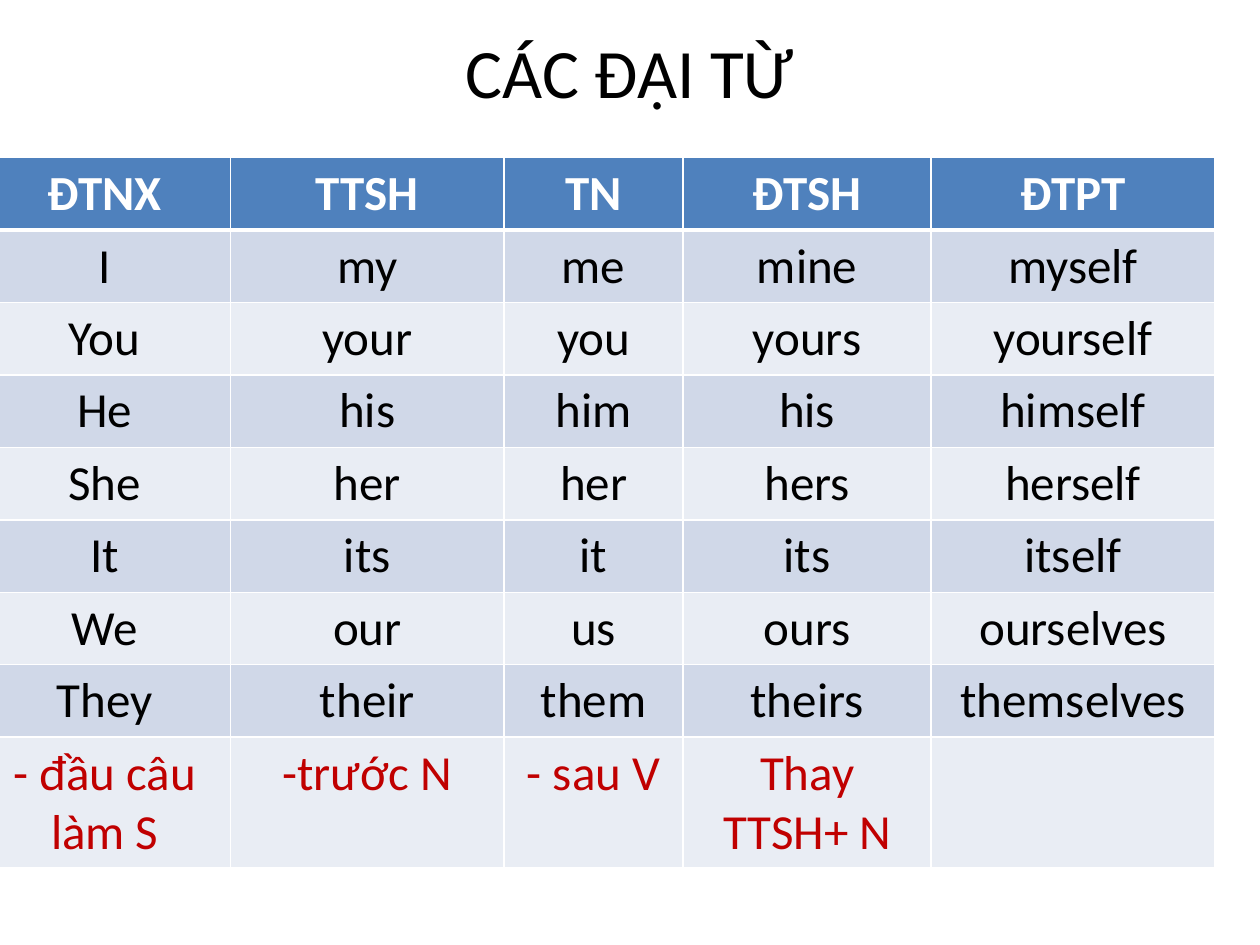
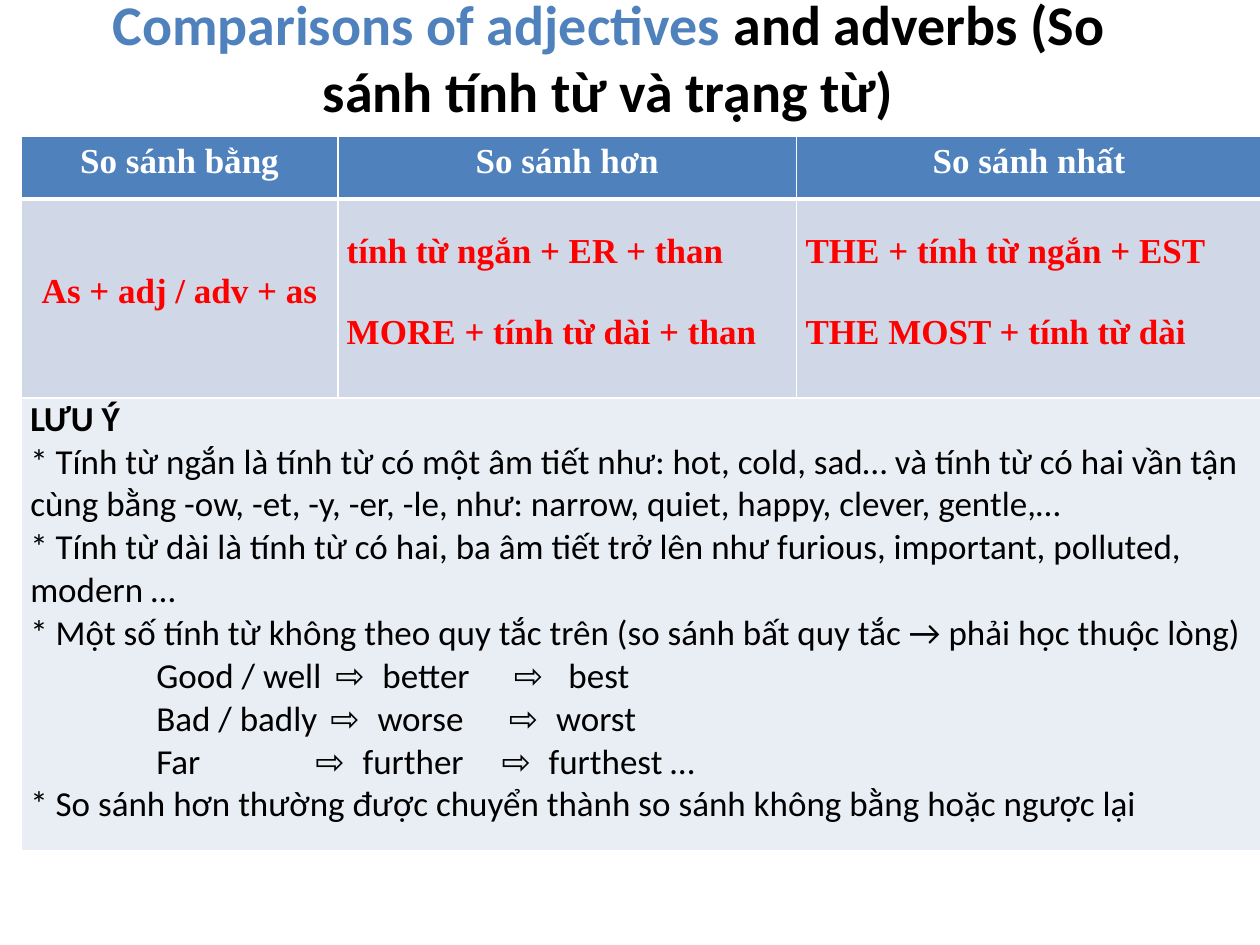
from lxml import etree
from pptx import Presentation
from pptx.dml.color import RGBColor
from pptx.enum.text import MSO_ANCHOR, PP_ALIGN
from pptx.oxml.ns import qn
from pptx.util import Cm, Pt

CENTER, LEFT = PP_ALIGN.CENTER, PP_ALIGN.LEFT
TOP, MIDDLE = MSO_ANCHOR.TOP, MSO_ANCHOR.MIDDLE
BLUE = RGBColor(0x4F, 0x81, 0xBD)
BAND_DARK = RGBColor(0xD0, 0xD8, 0xE8)
BAND_LIGHT = RGBColor(0xE9, 0xED, 0xF4)
WHITE = RGBColor(0xFF, 0xFF, 0xFF)
BLACK = RGBColor(0, 0, 0)
DARK_RED = RGBColor(0xC0, 0, 0)
RED = RGBColor(0xFF, 0, 0)
SANS, SERIF = "Calibri", "Times New Roman"

PRONOUNS = [
    ["ĐTNX", "TTSH", "TN", "ĐTSH", "ĐTPT"],
    ["I", "my", "me", "mine", "myself"],
    ["You", "your", "you", "yours", "yourself"],
    ["He", "his", "him", "his", "himself"],
    ["She", "her", "her", "hers", "herself"],
    ["It", "its", "it", "its", "itself"],
    ["We", "our", "us", "ours", "ourselves"],
    ["They", "their", "them", "theirs", "themselves"],
    ["- đầu câu làm S", "-trước N", "- sau V", "Thay TTSH+ N", ""],
]
COMPARISON_HEADS = ["So sánh bằng", "So sánh hơn", "So sánh nhất"]
COMPARISON_FORMS = [
    ["As + adj / adv + as"],
    ["tính từ ngắn + ER + than", "MORE + tính từ dài + than"],
    ["THE + tính từ ngắn + EST", "THE MOST + tính từ dài"],
]
NOTES = [
    ("LƯU Ý", []),
    ("* Tính từ ngắn là tính từ có một âm tiết như: hot, cold, sad… và tính từ có hai vần "
     "tận cùng bằng -ow, -et, -y, -er, -le, như: narrow, quiet, happy, clever, gentle,…", []),
    ("* Tính từ dài là tính từ có hai, ba âm tiết trở lên như furious, important, polluted, "
     "modern …", []),
    ("* Một số tính từ không theo quy tắc trên (so sánh bất quy tắc → phải học thuộc lòng)", []),
    ("\tGood / well\t⇨\tbetter\t⇨\tbest", [2.54, 6.15, 7.1, 9.75, 10.85]),
    ("\tBad / badly\t⇨\tworse\t⇨\tworst", [2.54, 6.05, 7, 9.65, 10.6]),
    ("\tFar\t⇨\tfurther\t⇨\tfurthest …", [2.54, 5.75, 6.7, 9.5, 10.45]),
    ("* So sánh hơn thường được chuyển thành so sánh không bằng hoặc ngược lại", []),
]


def add_run(p, text, size, color, bold=False, font=SANS):
    r = p.add_run()
    r.text = text
    r.font.name, r.font.size, r.font.bold = font, Pt(size), bold
    r.font.color.rgb = color


def add_title(s, left, top, width, height, size, runs, bold=False):
    tf = s.shapes.add_textbox(Cm(left), Cm(top), Cm(width), Cm(height)).text_frame
    tf.word_wrap = True
    tf.vertical_anchor = MIDDLE
    tf.margin_top = tf.margin_bottom = 0
    p = tf.paragraphs[0]
    p.alignment = CENTER
    for text, color in runs:
        add_run(p, text, size, color, bold)


def set_borders(cell, top=1, bottom=1):
    tc_pr = cell._tc.get_or_add_tcPr()
    widths = {"lnL": 1, "lnR": 1, "lnT": top, "lnB": bottom}
    for i, (tag, width) in enumerate(widths.items()):
        ln = etree.Element(qn(f"a:{tag}"), w=str(Pt(width)))
        fill = etree.SubElement(ln, qn("a:solidFill"))
        etree.SubElement(fill, qn("a:srgbClr"), val=str(WHITE))
        tc_pr.insert(i, ln)


def add_banded_table(s, left, top, col_widths, row_heights):
    frame = s.shapes.add_table(len(row_heights), len(col_widths), Cm(left), Cm(top),
                               Cm(sum(col_widths)), Cm(sum(row_heights)))
    table = frame.table
    for col, width in zip(table.columns, col_widths):
        col.width = Cm(width)
    for i, (row, height) in enumerate(zip(table.rows, row_heights)):
        row.height = Cm(height)
        for cell in row.cells:
            cell.fill.solid()
            cell.fill.fore_color.rgb = BLUE if i == 0 else BAND_DARK if i % 2 else BAND_LIGHT
            set_borders(cell, 3 if i == 1 else 1, 3 if i == 0 else 1)
    return table


def set_tabs(p, stops):
    tab_list = etree.SubElement(p._p.get_or_add_pPr(), qn("a:tabLst"))
    for stop in stops:
        etree.SubElement(tab_list, qn("a:tab"), pos=str(Cm(stop)), algn="l")


def cell_paragraphs(cell, count):
    tf = cell.text_frame
    return [tf.paragraphs[0]] + [tf.add_paragraph() for _ in range(count - 1)]


def set_tight_margins(cell, anchor):
    cell.vertical_anchor = anchor
    cell.margin_left = cell.margin_right = Cm(0.18)
    cell.margin_top = cell.margin_bottom = 0


def fill_comparison_cell(cell, lines, color, align):
    set_tight_margins(cell, MIDDLE)
    for i, p in enumerate(cell_paragraphs(cell, len(lines))):
        p.alignment = align
        p.line_spacing = Pt(15)
        p.space_after = Pt(8 if i == len(lines) - 1 else 31)
        add_run(p, lines[i], 20, color, True, SERIF)


def fill_notes(cell):
    set_tight_margins(cell, TOP)
    for i, p in enumerate(cell_paragraphs(cell, len(NOTES))):
        text, stops = NOTES[i]
        if stops:
            set_tabs(p, stops)
        add_run(p, text, 20, BLACK, i == 0)


def build_pronouns(s):
    add_title(s, 1.27, 0.76, 22.86, 1.35, 39.6, [("CÁC ĐẠI TỪ", BLACK)])
    last = len(PRONOUNS) - 1
    table = add_banded_table(s, -0.43, 3.18, [5.08, 5.51, 3.61, 5, 5.72],
                             [1.46] * last + [2.64])
    for i, words in enumerate(PRONOUNS):
        color = WHITE if i == 0 else DARK_RED if i == last else BLACK
        for j, word in enumerate(words):
            p = table.cell(i, j).text_frame.paragraphs[0]
            p.alignment = CENTER
            if word:
                add_run(p, word, 28, color, i == 0)


def build_comparisons(s):
    add_title(s, 0.84, 0, 22.86, 2.29, 32,
              [("Comparisons of adjectives ", BLUE),
               ("and adverbs (So sánh tính từ và trạng từ)", BLACK)], True)
    table = add_banded_table(s, 0.43, 2.74, [6.38, 9.25, 9.37], [1.27, 4.01, 9.14])
    for j, (head, forms) in enumerate(zip(COMPARISON_HEADS, COMPARISON_FORMS)):
        fill_comparison_cell(table.cell(0, j), [head], WHITE, CENTER)
        fill_comparison_cell(table.cell(1, j), forms, RED, CENTER if j == 0 else LEFT)
    notes = table.cell(2, 0)
    notes.merge(table.cell(2, 2))
    fill_notes(notes)


def main():
    prs = Presentation()
    prs.slide_width, prs.slide_height = Cm(25.4), Cm(19.05)
    blank = prs.slide_layouts[6]
    for build in (build_pronouns, build_comparisons):
        build(prs.slides.add_slide(blank))
    prs.save("out.pptx")


if __name__ == "__main__":
    main()
